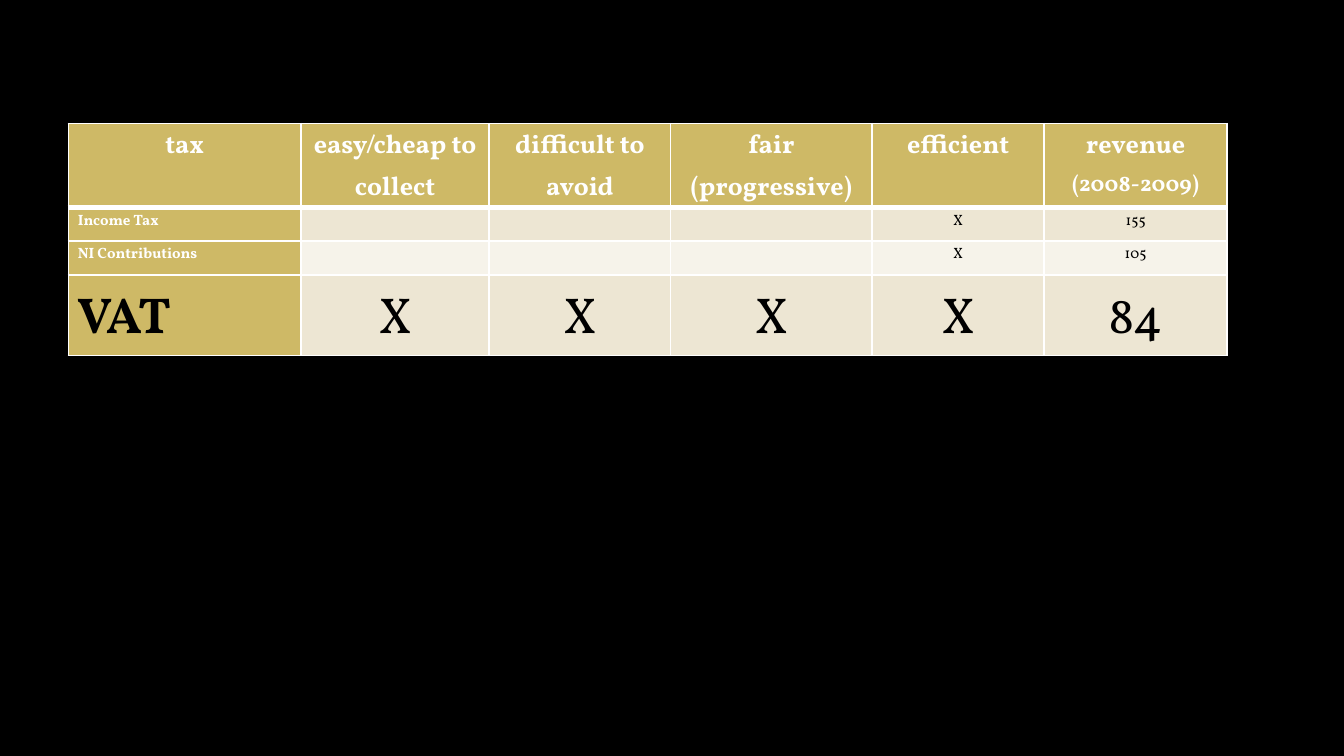
"""Build a slide with a table comparing three taxes."""
from lxml import etree
from pptx import Presentation
from pptx import util as u
from pptx.dml.color import RGBColor
from pptx.enum import text
from pptx.oxml import ns

BLACK = RGBColor(0, 0, 0)
WHITE = RGBColor(255, 255, 255)
GOLD = RGBColor(0xCE, 0xB9, 0x66)
SAND = RGBColor(0xED, 0xE6, 0xD3)
CREAM = RGBColor(0xF6, 0xF3, 0xEA)

COLUMNS = [1.73, 1.4, 1.35, 1.5, 1.28, 1.36]
ROWS = [0.52, 0.25, 0.25, 0.52]
SIZES = [14, 8, 8, 27]
BANDS = [GOLD, SAND, CREAM, SAND]
TAXES = [
    ["tax", "easy/cheap to collect", "difficult to avoid",
     "fair (progressive)", "efficient", "revenue\n(2008-2009)"],
    ["Income Tax", "", "", "", "X", "155"],
    ["NI Contributions", "", "", "", "X", "105"],
    ["VAT", "X", "X", "X", "X", "84"],
]


def add_border(cell, side, points):
    properties = cell._tc.get_or_add_tcPr()
    line = etree.SubElement(properties, ns.qn(f"a:ln{side}"), w=str(u.Pt(points)))
    fill = etree.SubElement(line, ns.qn("a:solidFill"))
    etree.SubElement(fill, ns.qn("a:srgbClr"), val=str(WHITE))


deck = Presentation()
deck.slide_width = u.Inches(10)
deck.slide_height = deck.slide_width * 9 // 16
page = deck.slides.add_slide(deck.slide_layouts[6])
page.background.fill.solid()
page.background.fill.fore_color.rgb = BLACK

frame = page.shapes.add_table(
    len(ROWS), len(COLUMNS), u.Inches(0.51), u.Inches(0.92),
    u.Inches(sum(COLUMNS)), u.Inches(sum(ROWS)))
table = frame.table
for column, width in zip(table.columns, COLUMNS):
    column.width = u.Inches(width)
for row, height in zip(table.rows, ROWS):
    row.height = u.Inches(height)

margins = {"margin_left": u.Inches(0.07), "margin_right": u.Inches(0.07),
           "margin_top": 0, "margin_bottom": 0}
for r, words in enumerate(TAXES):
    for c, wording in enumerate(words):
        cell = table.cell(r, c)
        for name, value in margins.items():
            setattr(cell, name, value)
        widths = {"L": 1, "R": 1, "T": 3 if r == 1 else 1, "B": 3 if r == 0 else 1}
        for side, points in widths.items():
            add_border(cell, side, points)
        cell.fill.solid()
        cell.fill.fore_color.rgb = GOLD if c == 0 else BANDS[r]

        cell.text = wording
        is_label = r == 0 or c == 0
        for index, para in enumerate(cell.text_frame.paragraphs):
            para.line_spacing = 1.15
            para.alignment = (text.PP_ALIGN.LEFT if r > 0 and c == 0
                              else text.PP_ALIGN.CENTER)
            size = SIZES[r] - 2 * index
            for span in para.runs:
                style = {"name": "Vollkorn", "size": u.Pt(size), "bold": is_label}
                for name, value in style.items():
                    setattr(span.font, name, value)
                span.font.color.rgb = WHITE if is_label and r < 3 else BLACK
            if not wording:
                etree.SubElement(para._p, ns.qn("a:endParaRPr"), sz=str(size * 100))

deck.save("out.pptx")
